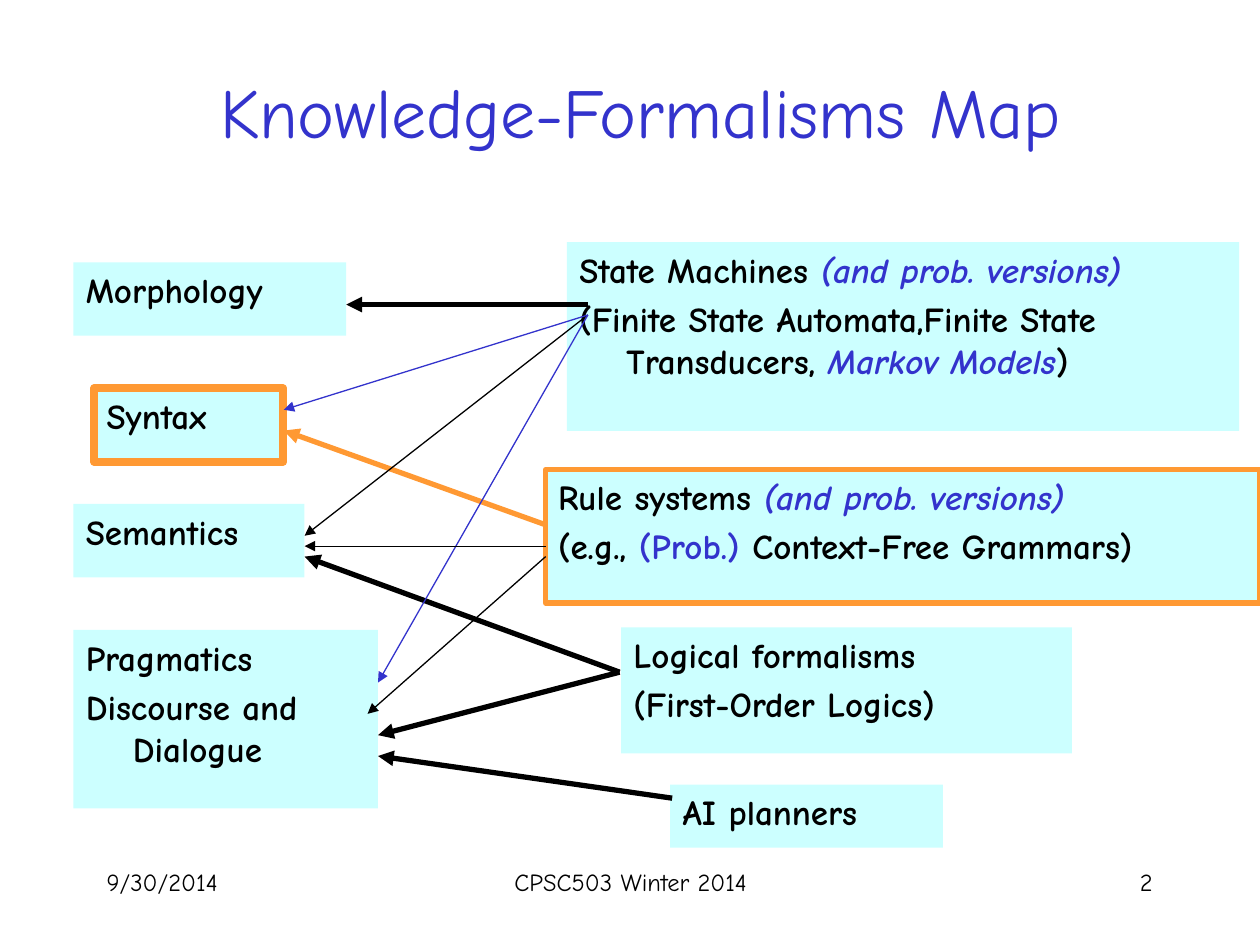
from dataclasses import dataclass
from typing import Optional

from lxml import etree
from pptx import Presentation
from pptx import util as u
from pptx.dml.color import RGBColor
from pptx.enum import shapes, text
from pptx.oxml.ns import qn

FONT = "Comic Neue"
COLORS = {"ink": "000000", "blue": "3333CC", "panel": "CCFFFF", "orange": "FF9933"}


@dataclass(frozen=True)
class Run:
    text: str
    color: str = "ink"
    italic: bool = False


@dataclass(frozen=True)
class Box:
    left: float
    top: float
    width: float
    height: float
    paragraphs: list[list[Run]]
    border: Optional[float] = None


@dataclass(frozen=True)
class Arrow:
    start: tuple[float, float]
    end: tuple[float, float]
    color: str = "ink"
    weight: float = 0.75


# Knowledge on the left, formalisms on the right (lengths in cm)
VERSIONS = Run("(and prob. versions)", "blue", True)
BOXES = [
    Box(12.52, 12.65, 9.09, 2.54,
        [[Run("Logical formalisms")], [Run("(First-Order Logics)")]]),
    Box(11, 9.47, 14.4, 2.69,
        [[Run("Rule systems "), VERSIONS],
         [Run("(e.g., "), Run("(Prob.)", "blue"), Run(" Context-Free Grammars)")]],
        border=3),
    Box(11.43, 4.88, 13.55, 3.81,
        [[Run("State Machines "), VERSIONS],
         [Run("(Finite State Automata,Finite State Transducers, "),
          Run("Markov Models", "blue", True), Run(")")]]),
    Box(1.48, 5.29, 5.5, 1.48, [[Run("Morphology")]]),
    Box(1.9, 7.83, 3.81, 1.48, [[Run("Syntax")]], border=4.5),
    Box(1.48, 12.7, 6.14, 3.6, [[Run("Pragmatics")], [Run("Discourse and Dialogue")]]),
    Box(1.48, 10.16, 4.66, 1.48, [[Run("Semantics")]]),
    Box(13.51, 15.82, 5.5, 1.27, [[Run("AI planners")]]),
]

# Arrows from each formalism to the knowledge it describes
STATE_MACHINES = (11.85, 6.35)
LOGIC = (12.49, 13.55)
ARROWS = [
    Arrow((11.85, 6.14), (6.98, 6.14), weight=3),
    Arrow((11, 10.58), (5.72, 8.68), "orange", 3),
    Arrow(LOGIC, (6.14, 11.22), weight=3),
    Arrow(LOGIC, (7.62, 14.82), weight=3),
    Arrow(STATE_MACHINES, (6.14, 10.8)),
    Arrow(STATE_MACHINES, (7.62, 13.76), "blue"),
    Arrow((11, 11.01), (6.14, 11.01)),
    Arrow((11, 11.22), (7.41, 14.39)),
    Arrow((13.55, 16.09), (7.62, 15.24), weight=3),
    Arrow(STATE_MACHINES, (5.72, 8.26), "blue"),
]

FOOTERS = [
    (1.9, 5.28, "9/30/2014", text.PP_ALIGN.LEFT),
    (8.69, 8.05, "CPSC503 Winter 2014", text.PP_ALIGN.CENTER),
    (18.21, 5.28, "2", text.PP_ALIGN.RIGHT),
]


def rgb(name: str) -> RGBColor:
    return RGBColor.from_string(COLORS[name])


def write(frame, paragraphs: list[list[Run]], *, size: float, bold: bool = False,
          align=text.PP_ALIGN.LEFT, anchor=text.MSO_ANCHOR.TOP,
          hanging: float = 0, gap: float = 0) -> None:
    frame.word_wrap = True
    frame.auto_size = text.MSO_AUTO_SIZE.NONE
    frame.vertical_anchor = anchor
    for index, runs in enumerate(paragraphs):
        paragraph = frame.add_paragraph() if index else frame.paragraphs[0]
        paragraph.alignment = align
        paragraph.space_before = u.Pt(gap if index else 0)
        if hanging:
            properties = paragraph._p.get_or_add_pPr()
            properties.set("marL", str(u.Cm(hanging)))
            properties.set("indent", str(-u.Cm(hanging)))
        for part in runs:
            run = paragraph.add_run()
            run.text = part.text
            run.font.name = FONT
            run.font.size = u.Pt(size)
            run.font.bold = bold
            run.font.italic = part.italic
            run.font.color.rgb = rgb(part.color)


def draw_box(slide, box: Box) -> None:
    panel = slide.shapes.add_shape(
        shapes.MSO_SHAPE.RECTANGLE,
        u.Cm(box.left), u.Cm(box.top), u.Cm(box.width), u.Cm(box.height))
    panel.shadow.inherit = False
    panel.fill.solid()
    panel.fill.fore_color.rgb = rgb("panel")
    if box.border:
        panel.line.color.rgb = rgb("orange")
        panel.line.width = u.Pt(box.border)
    else:
        panel.line.fill.background()
    write(panel.text_frame, box.paragraphs, size=20, bold=True, hanging=0.95, gap=4)


def draw_arrow(slide, arrow: Arrow) -> None:
    link = slide.shapes.add_connector(
        shapes.MSO_CONNECTOR.STRAIGHT,
        *(u.Cm(value) for value in arrow.start + arrow.end))
    link.line.color.rgb = rgb(arrow.color)
    link.line.width = u.Pt(arrow.weight)
    etree.SubElement(link.line._get_or_add_ln(), qn("a:tailEnd"), type="triangle")
    etree.SubElement(link._element.spPr, qn("a:effectLst"))


def main() -> None:
    deck = Presentation()
    deck.slide_width, deck.slide_height = u.Cm(25.4), u.Cm(19.05)
    slide = deck.slides.add_slide(deck.slide_layouts.get_by_name("Title Only"))

    # Title
    title = slide.shapes.title
    title.left, title.top = u.Cm(2.54), u.Cm(0.64)
    title.width, title.height = u.Cm(20.75), u.Cm(3.18)
    write(title.text_frame, [[Run("Knowledge-Formalisms Map", "blue")]], size=40,
          align=text.PP_ALIGN.CENTER, anchor=text.MSO_ANCHOR.MIDDLE)

    # Map
    for box in BOXES:
        draw_box(slide, box)
    for arrow in ARROWS:
        draw_arrow(slide, arrow)

    # Footer
    for left, width, label, align in FOOTERS:
        footer = slide.shapes.add_textbox(u.Cm(left), u.Cm(17.35), u.Cm(width), u.Cm(1.27))
        write(footer.text_frame, [[Run(label)]], size=14, align=align)

    deck.save("out.pptx")


if __name__ == "__main__":
    main()
